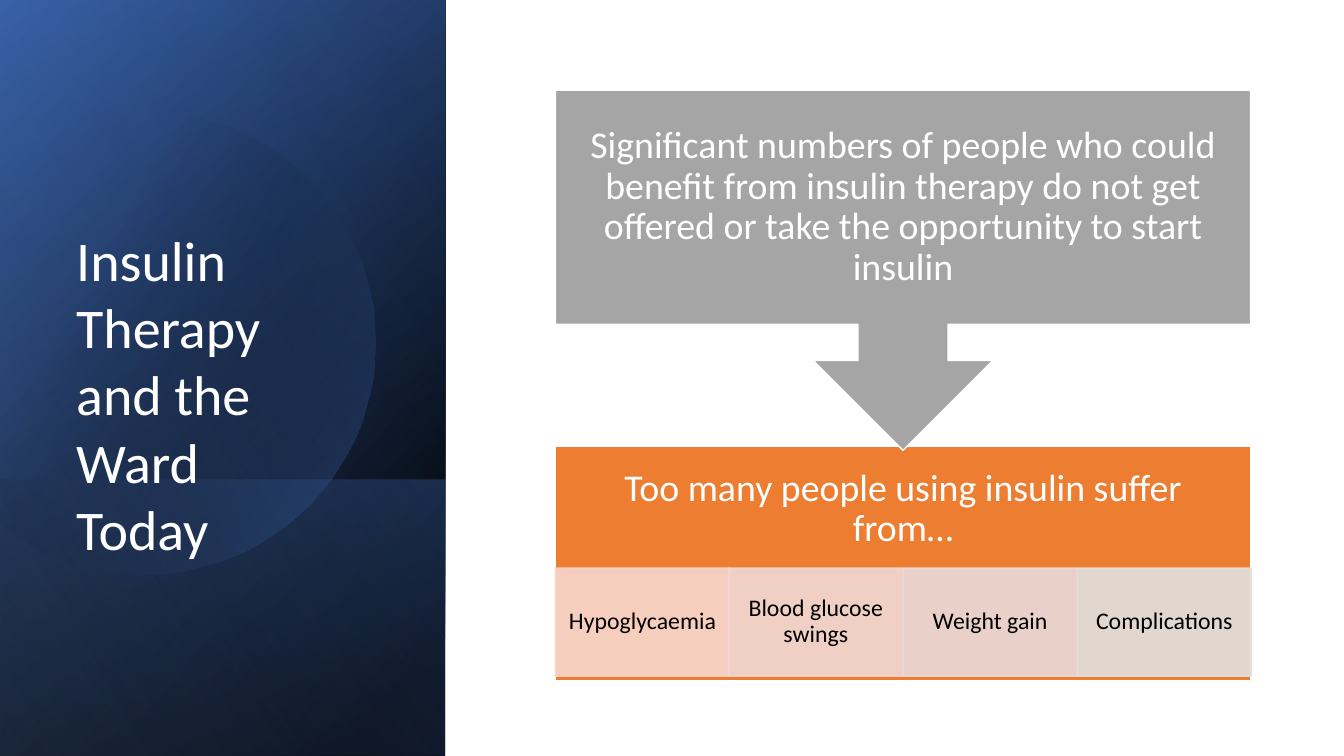
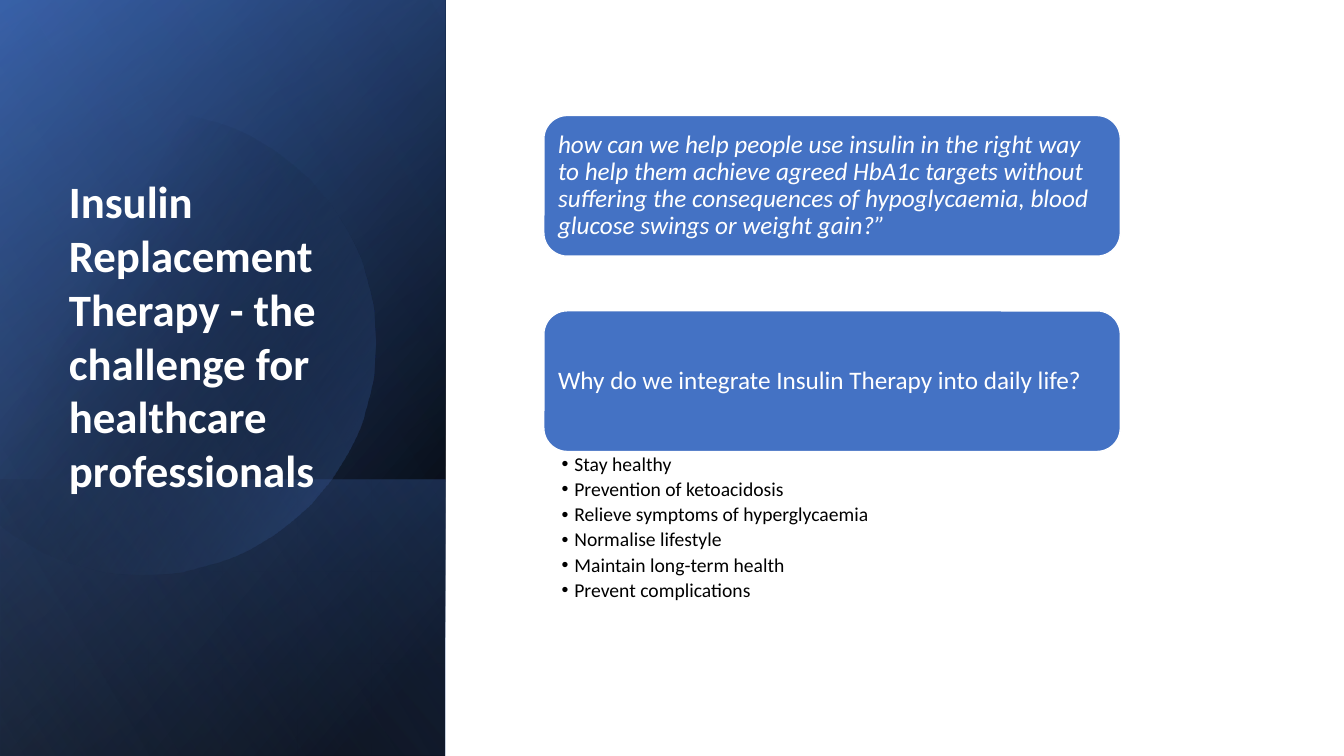
from math import cos, radians, sin

from lxml.etree import SubElement
from pptx import Presentation
from pptx.dml.color import RGBColor
from pptx.enum.shapes import MSO_SHAPE
from pptx.enum.text import MSO_ANCHOR, MSO_AUTO_SIZE, PP_ALIGN
from pptx.oxml import parse_xml
from pptx.oxml.ns import nsdecls, qn
from pptx.util import Pt

PX = 9525  # 96 px to the inch
FONT = "Calibri"
SIDE = 424  # width of the dark side panel
TALL = 720

HUE = {
    "white": "FFFFFF",
    "black": "000000",
    "navy": "2F5597",
    "blue": "4472C4",
    "sky": "8FAADC",
    "orange": "ED7D31",
    "grey": "A5A5A5",
}

# top, height, angle, stops as (place, colour, opacity)
BANDS = [
    (0, TALL, 50, [(8, "black", 100), (100, "navy", 100)]),
    (0, TALL, 30, [(0, "black", 0), (99, "blue", 46)]),
    (457, 263, 130, [(2, "blue", 29), (100, "black", 30)]),
]
DISC = (30, [(29, "black", 0), (100, "blue", 43)])
GLOSS = (0, TALL, 120, [(0, "black", 0), (99, "sky", 11)])

RISKS = [
    ("Hypoglycaemia", "F8D7CE"),
    ("Blood glucose swings", "F1D8D4"),
    ("Weight gain", "E9DBDA"),
    ("Complications", "E1E1E1"),
]
ASKS = [
    ("how can we help people use insulin in the right way to help them achieve "
     "agreed HbA1c targets without suffering the consequences of hypoglycaemia, "
     "blood glucose swings or weight gain?”", True),
    ("Why do we integrate Insulin Therapy into daily life?", False),
]
GOALS = [
    "Stay healthy",
    "Prevention of ketoacidosis",
    "Relieve symptoms of hyperglycaemia",
    "Normalise lifestyle",
    "Maintain long-term health",
    "Prevent complications",
]


def emu(*sizes):
    return [size * PX for size in sizes]


def rgb(name):
    return RGBColor.from_string(HUE.get(name, name))


def place(shape, *box):
    shape.left, shape.top, shape.width, shape.height = emu(*box)


def pad(frame, *sides):
    """Set the left, top, right and bottom insets."""
    (frame.margin_left, frame.margin_top,
     frame.margin_right, frame.margin_bottom) = emu(*sides)


def style(para, size, hue, bold=False, slant=False):
    font = para.font
    font.name, font.size = FONT, Pt(size)
    font.bold, font.italic = bold, slant
    font.color.rgb = rgb(hue)


def blend(shape, angle, stops):
    """Give the shape a linear gradient and no outline."""
    shape.shadow.inherit = False
    shape.line.fill.background()
    shape.fill.background()
    marks = "".join(
        f'<a:gs pos="{at * 1000}"><a:srgbClr val="{HUE[hue]}">'
        f'<a:alpha val="{alpha * 1000}"/></a:srgbClr></a:gs>'
        for at, hue, alpha in stops)
    grad = parse_xml(
        f'<a:gradFill {nsdecls("a")} rotWithShape="1"><a:gsLst>{marks}</a:gsLst>'
        f'<a:lin ang="{angle * 60000}" scaled="0"/></a:gradFill>')
    props = shape.element.spPr
    props.replace(props.find(qn("a:noFill")), grad)


def band(slide, top, high, angle, stops):
    """Add a mirrored rectangle, turned upright to span the side panel."""
    shift = (high - SIDE) // 2
    shape = slide.shapes.add_shape(
        MSO_SHAPE.RECTANGLE, *emu(-shift, top + shift, high, SIDE))
    shape.rotation = 90
    shape.element.spPr.find(qn("a:xfrm")).set("flipH", "1")
    blend(shape, angle, stops)


def disc(slide):
    """Add the circle that the left slide edge cuts off."""
    dots = [(round(137 + 221 * cos(radians(turn))),
             round(326 + 221 * sin(radians(turn))))
            for turn in range(-128, 129, 4)]
    path = slide.shapes.build_freeform(*dots[0], scale=PX)
    path.add_line_segments(dots[1:], close=True)
    blend(path.convert_to_shape(), *DISC)


def start(deck, layout, text, box, size, bold=False):
    """Add a slide with the side panel and its title."""
    slide = deck.slides.add_slide(deck.slide_layouts[layout])
    for row in BANDS:
        band(slide, *row)
    disc(slide)
    band(slide, *GLOSS)
    title = slide.shapes.title
    slide.shapes.element.append(title.element)
    place(title, *box)
    frame = title.text_frame
    frame.text = text
    frame.word_wrap = True
    frame.auto_size = MSO_AUTO_SIZE.NONE
    frame.vertical_anchor = MSO_ANCHOR.TOP
    para = frame.paragraphs[0]
    para.alignment = PP_ALIGN.LEFT
    style(para, size, "white", bold)
    return slide


def card(slide, kind, box, fill, text, size, inset, hue="white", edge="white",
         align=PP_ALIGN.CENTER, slant=False):
    """Add a filled shape with text in its middle."""
    shape = slide.shapes.add_shape(kind, *emu(*box))
    shape.shadow.inherit = False
    shape.fill.solid()
    shape.fill.fore_color.rgb = rgb(fill)
    shape.line.color.rgb = rgb(edge)
    shape.line.width = Pt(1)
    frame = shape.text_frame
    frame.text = text
    frame.word_wrap = True
    frame.vertical_anchor = MSO_ANCHOR.MIDDLE
    pad(frame, *inset)
    para = frame.paragraphs[0]
    para.alignment, para.line_spacing = align, 0.9
    style(para, size, hue, slant=slant)
    return shape


def fade(shape, alpha):
    for tint in shape.element.spPr.iter(qn("a:srgbClr")):
        SubElement(tint, qn("a:alpha")).set("val", str(alpha * 1000))


def goals(slide):
    body = slide.placeholders[1]
    slide.shapes.element.append(body.element)
    place(body, 518, 430, 549, 153)
    frame = body.text_frame
    frame.text = "\n".join(GOALS)
    frame.auto_size = MSO_AUTO_SIZE.NONE
    pad(frame, 17, 3, 13, 3)
    for para in frame.paragraphs:
        style(para, 14, "black")
        para.line_spacing = 0.9
        para.space_before, para.space_after = Pt(0), Pt(2.8)
        props = para._p.get_or_add_pPr()
        props.set("marL", str(12 * PX))
        props.set("indent", str(-12 * PX))


def today(deck):
    slide = start(deck, 5, "Insulin Therapy and the Ward Today",
                  (63, 210, 257, 268), 40)
    left, wide = 529, 662
    card(slide, MSO_SHAPE.RECTANGLE, (left, 425, wide, 223), "orange",
         "Too many people using insulin suffer from…", 27, (20, 20, 20, 123))
    step = wide / len(RISKS)
    for i, (text, fill) in enumerate(RISKS):
        box = (round(left + i * step), 541, round(step), 103)
        cell = card(slide, MSO_SHAPE.RECTANGLE, box, fill, text, 17,
                    (12, 2, 12, 2), "black", fill)
        fade(cell, 90)
    card(slide, MSO_SHAPE.DOWN_ARROW_CALLOUT, (left, 86, wide, 343), "grey",
         "Significant numbers of people who could benefit from insulin therapy "
         "do not get offered or take the opportunity to start insulin",
         27, (20, 20, 20, 20))


def challenge(deck):
    slide = start(deck, 1, "Insulin Replacement Therapy - the challenge for "
                  "healthcare professionals", (56, 161, 324, 320), 32, True)
    for i, (text, slant) in enumerate(ASKS):
        card(slide, MSO_SHAPE.ROUNDED_RECTANGLE, (518, 110 + 186 * i, 549, 134),
             "blue", text, 18, (7, 7, 7, 7), align=PP_ALIGN.LEFT, slant=slant)
    goals(slide)


def main():
    deck = Presentation()
    deck.slide_width, deck.slide_height = emu(1280, TALL)
    today(deck)
    challenge(deck)
    deck.save("out.pptx")


if __name__ == "__main__":
    main()
